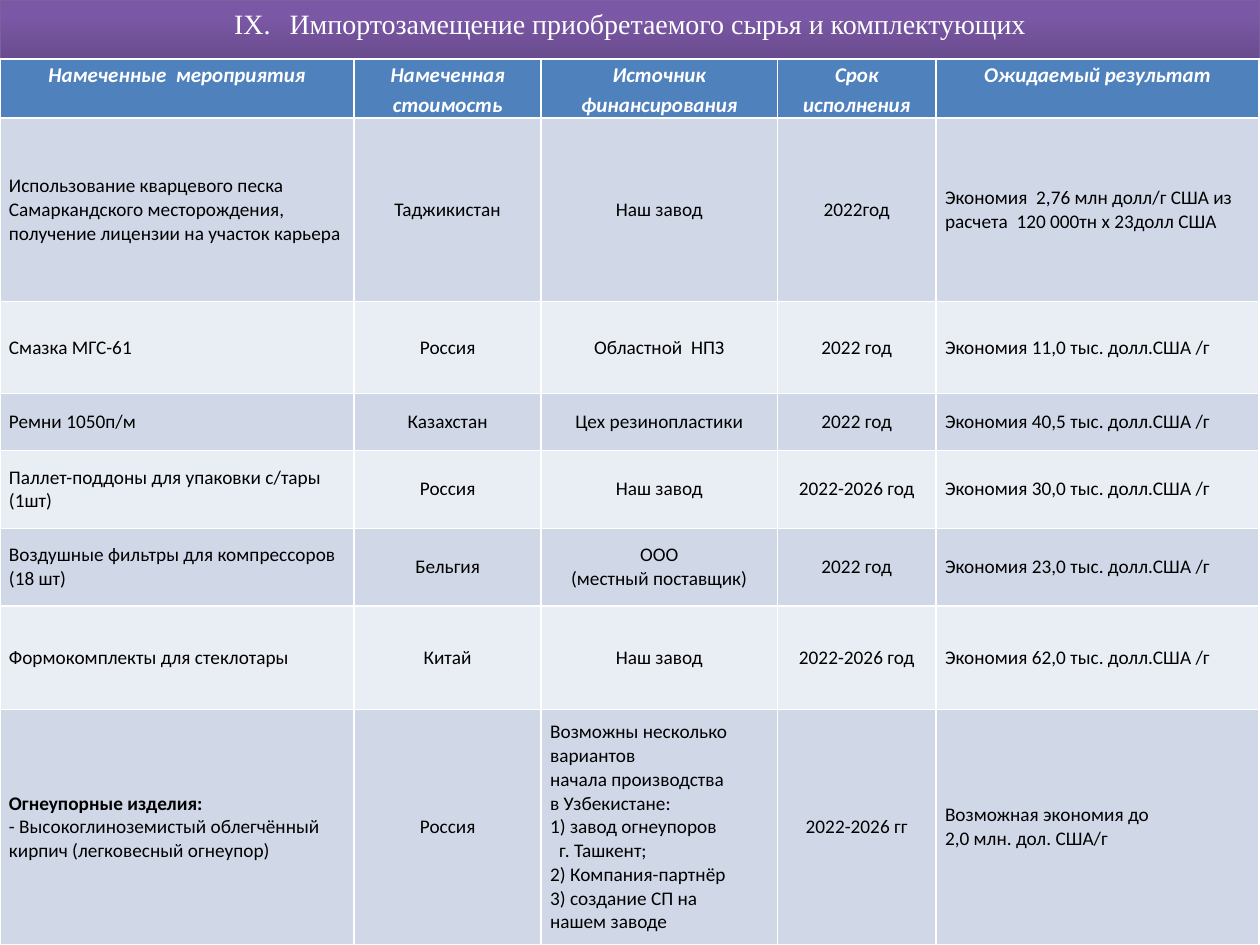
"""Build a slide with a table of import substitution measures."""
from lxml import etree
from pptx import Presentation
from pptx.dml.color import RGBColor
from pptx.enum.text import MSO_ANCHOR, MSO_AUTO_SIZE, PP_ALIGN
from pptx.oxml import parse_xml
from pptx.oxml.ns import nsdecls, qn
from pptx.util import Cm, Pt

TOP, MIDDLE = MSO_ANCHOR.TOP, MSO_ANCHOR.MIDDLE
LEFT, CENTER = PP_ALIGN.LEFT, PP_ALIGN.CENTER
NO_AUTOFIT = MSO_AUTO_SIZE.NONE
TITLE_ONLY = 5

COLUMN_WIDTHS = [7.14, 3.77, 4.76, 3.2, 6.51]
ROW_HEIGHTS = [1.19, 3.7, 1.85, 1.15, 1.57, 1.57, 2.08, 4.75]
COLUMN_ALIGNMENTS = [LEFT, CENTER, CENTER, CENTER, LEFT]
HEADINGS = ["Намеченные  мероприятия", "Намеченная\nстоимость",
            "Источник финансирования", "Срок исполнения", "Ожидаемый результат"]
MEASURES = [
    ["Использование кварцевого песка Самаркандского месторождения, "
     "получение лицензии на участок карьера", "Таджикистан", "Наш завод", "2022год",
     "Экономия  2,76 млн долл/г США из расчета  120 000тн x 23долл США"],
    ["Смазка МГС-61", "Россия", "Областной  НПЗ", "2022 год",
     "Экономия 11,0 тыс. долл.США /г"],
    ["Ремни 1050п/м", "Казахстан", "Цех резинопластики", "2022 год",
     "Экономия 40,5 тыс. долл.США /г"],
    ["Паллет-поддоны для упаковки с/тары (1шт)", "Россия", "Наш завод",
     "2022-2026 год", "Экономия 30,0 тыс. долл.США /г"],
    ["Воздушные фильтры для компрессоров (18 шт)", "Бельгия",
     "ООО\n(местный поставщик)", "2022 год", "Экономия 23,0 тыс. долл.США /г"],
    ["Формокомплекты для стеклотары", "Китай", "Наш завод", "2022-2026 год",
     "Экономия 62,0 тыс. долл.США /г"],
    ["Огнеупорные изделия:\n- Высокоглиноземистый облегчённый кирпич "
     "(легковесный огнеупор)", "Россия",
     "Возможны несколько вариантов\nначала производства\nв Узбекистане:\n"
     "1) завод огнеупоров\vг. Ташкент;\n2) Компания-партнёр\n"
     "3) создание СП на\nнашем заводе", "2022-2026 гг",
     "Возможная экономия до\n2,0 млн. дол. США/г"],
]


def color(value):
    return RGBColor.from_string(value)


class SlideBuilder:
    title_font, table_font = "Times New Roman", "Calibri"
    white, black, header_fill = "FFFFFF", "000000", "4F81BD"
    band_fills = ["D0D8E8", "E9EDF4"]
    title_stops = [(0, "5F4480"), (80, "7B58A6"), (100, "7C57A8")]

    def __init__(self, presentation):
        layout = presentation.slide_layouts[TITLE_ONLY]
        self.slide = presentation.slides.add_slide(layout)

    def style_font(self, font, name, size, value, bold=False, italic=False):
        font.name, font.size = name, Pt(size)
        font.bold, font.italic = bold, italic
        font.color.rgb = color(value)

    def add_title(self, text, number, left, top, width, height):
        shape = self.slide.shapes.title
        shape.left, shape.top = Cm(left), Cm(top)
        shape.width, shape.height = Cm(width), Cm(height)
        properties = shape.element.spPr
        stops = "".join(f'<a:gs pos="{position * 1000}"><a:srgbClr val="{value}"/></a:gs>'
                        for position, value in self.title_stops)
        properties.append(parse_xml(
            f'<a:gradFill {nsdecls("a")} rotWithShape="1"><a:gsLst>{stops}</a:gsLst>'
            '<a:lin ang="16200000" scaled="0"/></a:gradFill>'))
        shape.line.color.rgb = color("7D60A0")
        shape.line.width = Pt(0.75)
        properties.append(parse_xml(
            f'<a:effectLst {nsdecls("a")}><a:outerShdw blurRad="{Pt(3.1)}" '
            f'dist="{Pt(1.8)}" dir="5400000" rotWithShape="0"><a:srgbClr val="000000">'
            '<a:alpha val="35000"/></a:srgbClr></a:outerShdw></a:effectLst>'))
        frame = shape.text_frame
        frame.text = text
        frame.word_wrap, frame.auto_size = True, NO_AUTOFIT
        frame.vertical_anchor = TOP
        paragraph = frame.paragraphs[0]
        paragraph.alignment = CENTER
        paragraph_properties = self.set_hanging(paragraph, 1.12)
        bullet_font = etree.SubElement(paragraph_properties, qn("a:buFont"))
        bullet_font.set("typeface", self.title_font)
        numbering = etree.SubElement(paragraph_properties, qn("a:buAutoNum"))
        numbering.set("type", "romanUcPeriod")
        numbering.set("startAt", str(number))
        self.style_font(paragraph.font, self.title_font, 16, self.white)

    def set_hanging(self, paragraph, indent):
        properties = paragraph._p.get_or_add_pPr()
        properties.set("marL", str(Cm(indent)))
        properties.set("indent", str(-Cm(indent)))
        return properties

    def fill_cell(self, cell, text, fill, anchor):
        cell.text = text
        cell.fill.solid()
        cell.fill.fore_color.rgb = color(fill)
        cell.vertical_anchor = anchor
        cell.margin_left = cell.margin_right = Cm(0.18)
        cell.margin_top = cell.margin_bottom = 0
        return cell.text_frame.paragraphs

    def add_header_cell(self, cell, text):
        for paragraph in self.fill_cell(cell, text, self.header_fill, TOP):
            paragraph.alignment = CENTER
            paragraph.line_spacing = 1.15
            self.style_font(paragraph.font, self.table_font, 12, self.white, True, True)

    def add_body_cell(self, cell, text, fill, alignment):
        if "\n1)" in text:
            alignment = LEFT
        for paragraph in self.fill_cell(cell, text, fill, MIDDLE):
            paragraph.alignment = alignment
            if "\v" in paragraph.text:
                self.set_hanging(paragraph, 0.18)
            is_heading = paragraph.text.endswith("изделия:")
            self.style_font(paragraph.font, self.table_font, 11, self.black, is_heading)

    def add_table(self, headings, rows, left, top):
        table = self.slide.shapes.add_table(
            len(rows) + 1, len(headings), Cm(left), Cm(top),
            Cm(sum(COLUMN_WIDTHS)), Cm(sum(ROW_HEIGHTS))).table
        for column, width in zip(table.columns, COLUMN_WIDTHS):
            column.width = Cm(width)
        for row, height in zip(table.rows, ROW_HEIGHTS):
            row.height = Cm(height)
        for index, heading in enumerate(headings):
            self.add_header_cell(table.cell(0, index), heading)
        for row_index, texts in enumerate(rows):
            fill = self.band_fills[row_index % 2]
            for index, (text, alignment) in enumerate(zip(texts, COLUMN_ALIGNMENTS)):
                self.add_body_cell(table.cell(row_index + 1, index), text, fill, alignment)


def main():
    presentation = Presentation()
    presentation.slide_width, presentation.slide_height = Cm(25.4), Cm(19.05)
    builder = SlideBuilder(presentation)
    builder.add_title("Импортозамещение приобретаемого сырья и комплектующих",
                      9, 0, 0, 25.4, 1.63)
    builder.add_table(HEADINGS, MEASURES, 0, 1.19)
    presentation.save("out.pptx")


if __name__ == "__main__":
    main()
